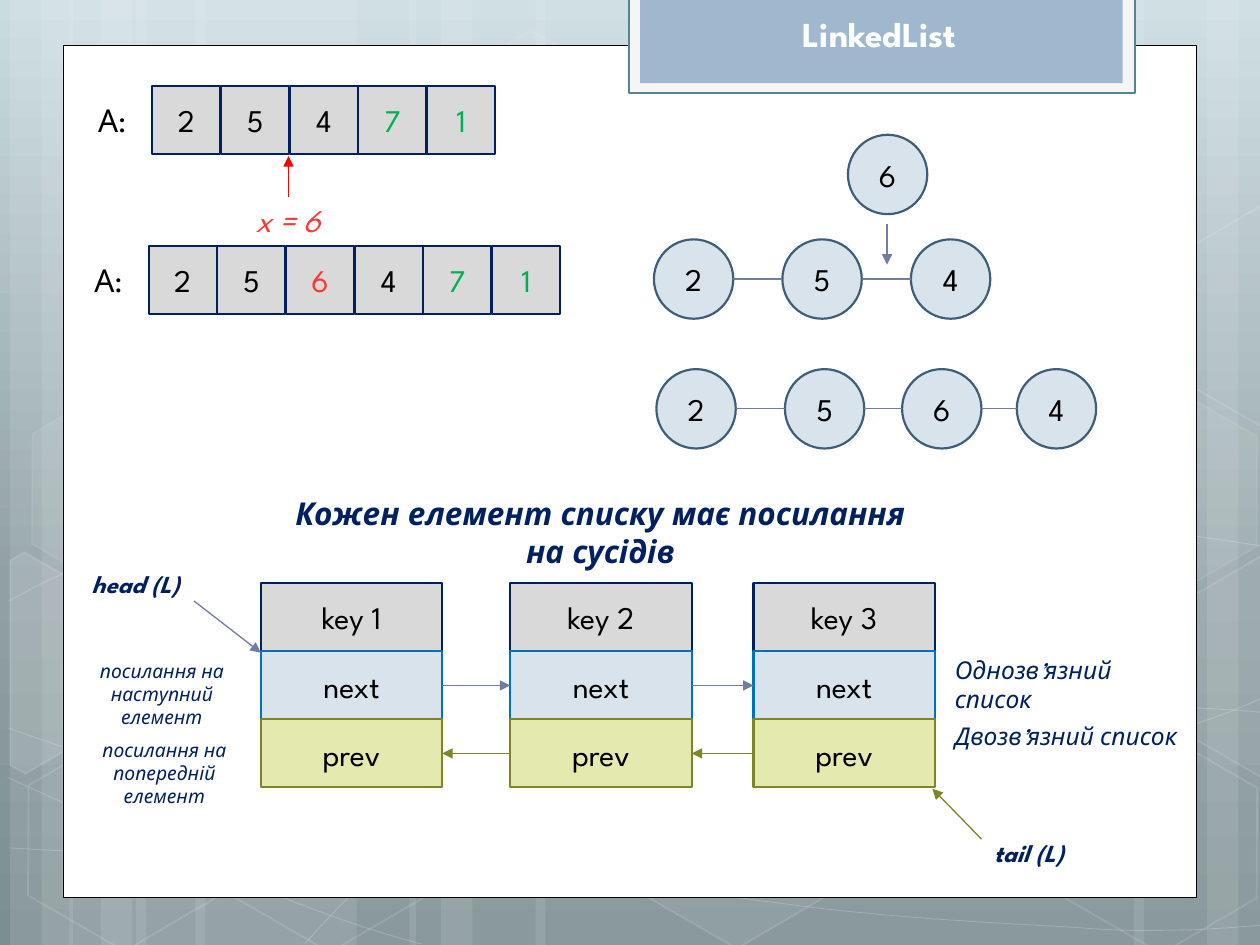
from copy import deepcopy
from itertools import pairwise
from math import cos, radians, sin

from pptx import Presentation
from pptx.dml.color import RGBColor
from pptx.enum.shapes import MSO_CONNECTOR, MSO_SHAPE
from pptx.enum.text import MSO_ANCHOR, MSO_AUTO_SIZE, PP_ALIGN
from pptx.oxml.ns import qn
from pptx.util import Inches, Pt
from lxml.etree import SubElement

FONT = "League Spartan"
WHITE, BLACK = RGBColor(255, 255, 255), RGBColor(0, 0, 0)
NAVY, RED, ARROW_RED = RGBColor(0, 0x20, 0x60), RGBColor(0xFF, 0x37, 0x37), RGBColor(255, 0, 0)
GREEN, GREY = RGBColor(0, 0xB0, 0x50), RGBColor(0xD9, 0xD9, 0xD9)
PALE_BLUE, SLATE = RGBColor(0xD9, 0xE3, 0xEB), RGBColor(0x3E, 0x5D, 0x78)
BLUE, LINK = RGBColor(0, 0x70, 0xC0), RGBColor(0x72, 0x7C, 0xA3)
LIME, OLIVE = RGBColor(0xE4, 0xE9, 0xAF), RGBColor(0x7D, 0x85, 0x25)
TAB_FILL, TAB_BORDER = RGBColor(0xF5, 0xF5, 0xF5), RGBColor(0x52, 0x86, 0x93)
TAB_INNER = RGBColor(0x9F, 0xB8, 0xCD)
SKY = ((0, RGBColor(0xCB, 0xDC, 0xE0)), (0.62, RGBColor(0x90, 0xA0, 0xA4)),
       (1, RGBColor(0x7D, 0x8E, 0x92)))

BANDS = [(1.08, 1.75), (0.08, 0.5), (0.33, 0.83), (1.55, 1.75), (0.55, 0.5), (0.8, 0.83),
         (7.33, 1.75), (9.58, 0.5), (9, 0.83), (4.25, 3.08), (3.25, 0.5), (3.5, 0.83)]
# Each curve is a start point followed by triples of Bezier points.
CURVES = [
    [(0.07, 6.73), (0.61, 6.76), (1.15, 6.79), (1.9, 6.78), (2.65, 6.77), (3.58, 6.75),
     (4.58, 6.65), (5.58, 6.55), (7, 6.36), (7.92, 6.17), (8.83, 5.98), (9.77, 5.68), (10.07, 5.51)],
    [(0.07, 4.77), (0.36, 4.61), (0.65, 4.46), (1.21, 4.31), (1.78, 4.16), (2.59, 3.94),
     (3.47, 3.87), (4.36, 3.8), (5.44, 3.79), (6.54, 3.87), (7.64, 3.95), (9.47, 4.26), (10.07, 4.34)],
    [(0.06, 6.17), (1.27, 6.72), (2.47, 7.27), (3.34, 7.49)],
    [(0.07, 5.78), (0.38, 5.89), (0.7, 6), (1.28, 6.16), (1.86, 6.31), (2.73, 6.56),
     (3.57, 6.73), (4.4, 6.9), (5.45, 7.08), (6.28, 7.18), (7.11, 7.29), (8, 7.33),
     (8.53, 7.36), (9.05, 7.4), (9.19, 7.38), (9.45, 7.38), (9.71, 7.37), (9.89, 7.35), (10.07, 7.34)],
    [(2.42, 7.49), (2.6, 7.29), (2.78, 7.09), (3.02, 6.91), (3.26, 6.73), (3.6, 6.53),
     (3.88, 6.39), (4.16, 6.25), (4.33, 6.19), (4.7, 6.09), (5.06, 5.99), (5.73, 5.85),
     (6.08, 5.78), (6.44, 5.71), (6.49, 5.71), (6.8, 5.69), (7.11, 5.66), (7.6, 5.63),
     (7.94, 5.62), (8.29, 5.61), (8.86, 5.62), (8.86, 5.62), (9.08, 5.62), (9.31, 5.62),
     (9.53, 5.62), (9.71, 5.63), (9.88, 5.64), (9.97, 5.65), (10.06, 5.66), (10.03, 5.65), (10.06, 5.66)],
]
# left, top, fill opacity, line opacity (percent)
HEXAGONS = [(3.34, 0.36, 4, 8), (4.97, 5.89, 6, 12), (0.11, 5.91, 0, 12), (0.14, 3.12, 7, 8),
            (1.74, 5.92, 0, 12), (7.53, 4.53, 10, 12), (8.34, 5.93, 0, 12), (8.34, 3.14, 7, 8)]
TILT = 30
# centre, corners as they stand after the tilt, fill opacity
CUT_HEXAGONS = [
    ((0.36, 5.35), [(0.08, 4.45), (0.19, 4.38), (0.96, 4.82), (0.95, 5.7), (0.2, 6.14), (0.08, 6.07)], 10),
    ((9.85, 5.2), [(9.26, 4.85), (10.01, 4.41), (10.09, 4.46), (10.09, 6.13), (10.02, 6.17), (9.26, 5.73)], 4),
    ((9.85, 2.41), [(9.26, 2.07), (10.01, 1.63), (10.1, 1.68), (10.09, 3.35), (10.02, 3.39), (9.26, 2.95)], 0),
]


def set_opacity(shape, fill_opacity, line_opacity):
    properties = shape._element.spPr
    for holder, percent in ((properties, fill_opacity), (properties.find(qn("a:ln")), line_opacity)):
        color = holder.find(qn("a:solidFill") + "/" + qn("a:srgbClr")) if percent else None
        if color is not None:
            SubElement(color, qn("a:alpha"), val=str(percent * 1000))


def paint(shape, fill=None, line=None, width=1.25):
    shape.shadow.inherit = False
    for target, color in ((shape.fill, fill), (shape.line.fill, line)):
        if color is None:
            target.background()
        else:
            target.solid()
            target.fore_color.rgb = color
    if line is not None:
        shape.line.width = Pt(width)


def write(shape, text, align=PP_ALIGN.CENTER, color=BLACK, **font_format):
    paragraph = shape.text_frame.paragraphs[0]
    paragraph.alignment = align
    run = paragraph.add_run()
    run.text = text
    run.font.color.rgb = color
    for name, value in {"name": FONT, "size": Pt(18), **font_format}.items():
        setattr(run.font, name, value)


def add_box(slide, box, fill, line=None, text="", color=BLACK, kind=MSO_SHAPE.RECTANGLE, width=1.25):
    shape = slide.shapes.add_shape(kind, *map(Inches, box))
    paint(shape, fill, line, width)
    if text:
        shape.text_frame.vertical_anchor = MSO_ANCHOR.MIDDLE
        write(shape, text, color=color)
    return shape


def add_label(slide, box, text, wrap=True, **text_format):
    label = slide.shapes.add_textbox(*map(Inches, box))
    label.text_frame.word_wrap = wrap
    label.text_frame.auto_size = MSO_AUTO_SIZE.SHAPE_TO_FIT_TEXT
    write(label, text, **text_format)


def add_line(slide, start, end, color=LINK, arrow=False):
    line = slide.shapes.add_connector(MSO_CONNECTOR.STRAIGHT, *map(Inches, (*start, *end)))
    line.line.color.rgb = color
    line.line.width = Pt(0.75)
    if arrow:
        SubElement(line.line._get_or_add_ln(), qn("a:tailEnd"), type="triangle")
    SubElement(line._element.spPr, qn("a:effectLst"))
    return line


def add_outline(slide, points, close):
    points = [(Inches(x), Inches(y)) for x, y in points]
    builder = slide.shapes.build_freeform(*points[0])
    builder.add_line_segments(points[1:], close=close)
    return builder.convert_to_shape()


def add_curve(slide, points):
    """Draw an outline and turn each three of its segments into one Bezier piece."""
    curve = add_outline(slide, points, False)
    segments = list(curve._element.spPr.iter(qn("a:lnTo")))
    outline = segments[0].getparent()
    for first in range(0, len(segments), 3):
        piece = SubElement(outline, qn("a:cubicBezTo"))
        for segment in segments[first:first + 3]:
            piece.append(segment[0])
            outline.remove(segment)
    return curve


def turn_back(point, center):
    angle = radians(TILT)
    dx, dy = point[0] - center[0], point[1] - center[1]
    return (center[0] + dx * cos(angle) + dy * sin(angle),
            center[1] - dx * sin(angle) + dy * cos(angle))


def build_backdrop(slide):
    fill = slide.background.fill
    fill.gradient()
    fill.gradient_angle = 270
    stop_list = fill.gradient_stops[0]._gs.getparent()
    stop_list.append(deepcopy(stop_list[0]))
    for stop, (position, color) in zip(fill.gradient_stops, SKY):
        stop.position, stop.color.rgb = position, color
    for left, width in BANDS:
        band = add_box(slide, (left, 0, width, 7.5), WHITE)
        set_opacity(band, 10, 0)
    for points in CURVES:
        curve = add_curve(slide, points)
        paint(curve, line=WHITE, width=0.5)
        set_opacity(curve, 0, 20)
    for left, top, opacity, line_opacity in HEXAGONS:
        hexagon = add_box(slide, (left, top, 1.75, 1.52), WHITE if opacity else None, WHITE,
                          kind=MSO_SHAPE.HEXAGON, width=1)
        hexagon.adjustments[0] = 0.285
        hexagon.rotation = TILT
        set_opacity(hexagon, opacity, line_opacity)
    for center, points, opacity in CUT_HEXAGONS:
        hexagon = add_outline(slide, [turn_back(point, center) for point in points], True)
        hexagon.rotation = TILT
        paint(hexagon, WHITE if opacity else None, WHITE, 1)
        set_opacity(hexagon, opacity, 12)
    add_box(slide, (0.5, 0.36, 9, 6.76), WHITE, BLACK, width=0.5)


def build_title(slide, left, top, width, height):
    add_box(slide, (left, top, width, height), TAB_FILL, TAB_BORDER)
    add_box(slide, (left + 0.09, top, width - 0.19, height - 0.08), TAB_INNER)
    title = slide.shapes.title
    title._element.getparent().append(title._element)  # bring in front of the tab
    title.left, title.top, title.width, title.height = map(Inches, (6.24, 0.05, 1.48, 0.44))
    for name, value in {"word_wrap": False, "vertical_anchor": MSO_ANCHOR.TOP,
                        "auto_size": MSO_AUTO_SIZE.SHAPE_TO_FIT_TEXT}.items():
        setattr(title.text_frame, name, value)
    write(title, "LinkedList", color=WHITE, size=Pt(20), bold=True)


def build_array(slide, left, top, values):
    colors = {"6": RED, "7": GREEN, "1": GREEN}
    add_label(slide, (left - 0.53, top + 0.07, 0.46, 0.4), "А:", wrap=False, align=PP_ALIGN.LEFT)
    for index, value in enumerate(values):
        add_box(slide, (left + index * 0.545, top, 0.54, 0.54), GREY, NAVY, value,
                colors.get(value, BLACK))


def build_chain(slide, top, nodes, size=0.63):
    """Draw circles at the given lefts and link the neighbours."""
    for left, value in nodes:
        add_box(slide, (left, top, size, size), PALE_BLUE, SLATE, value, kind=MSO_SHAPE.OVAL)
    middle = top + size / 2
    for (left, _), (following, _) in pairwise(nodes):
        add_line(slide, (left + size, middle), (following, middle))


def build_linked_elements(slide, lefts, top, width=1.44, height=0.54):
    rows = {"key": (GREY, NAVY), "next": (PALE_BLUE, BLUE), "prev": (LIME, OLIVE)}
    cells = {name: [] for name in rows}
    for row, (name, (fill, line)) in enumerate(rows.items()):
        for number, left in enumerate(lefts, 1):
            text = f"key {number}" if name == "key" else name
            box = (left, top + row * height, width, height)
            cells[name].append(add_box(slide, box, fill, line, text))
    for chain, color, start_site, end_site in ((cells["next"], LINK, 3, 1),
                                               (cells["prev"][::-1], OLIVE, 1, 3)):
        for start, end in pairwise(chain):
            arrow = add_line(slide, (0, 0), (1, 1), color, arrow=True)
            arrow.begin_connect(start, start_site)
            arrow.end_connect(end, end_site)
    add_line(slide, (1.54, 4.77), (lefts[0], 5.18), arrow=True)
    add_line(slide, (7.79, 6.66), (7.4, 6.26), OLIVE, arrow=True)


def build_notes(slide):
    navy = {"color": NAVY, "italic": True}
    small = {**navy, "size": Pt(11)}
    medium = {**navy, "size": Pt(14), "align": PP_ALIGN.LEFT}
    strong = {**medium, "bold": True}
    for box, text, text_format in (
        ((2.07, 3.87, 5.39, 0.71), "Кожен елемент списку має посилання на сусідів", {**navy, "bold": True}),
        ((0.58, 5.18, 1.41, 0.66), "посилання на наступний елемент", small),
        ((0.6, 5.81, 1.41, 0.66), "посилання на попередній елемент", small),
        ((7.48, 5.15, 2.09, 0.57), "Однозв’язний список", medium),
        ((7.48, 5.67, 2.09, 0.57), "Двозв’язний список", medium),
        ((0.63, 4.47, 1.1, 0.34), "head (L)", strong),
        ((7.79, 6.6, 1.1, 0.34), "tail (L)", strong),
    ):
        add_label(slide, box, text, **text_format)


def main():
    presentation = Presentation()
    presentation.slide_width, presentation.slide_height = Inches(10), Inches(7.5)
    slide = presentation.slides.add_slide(presentation.slide_layouts[5])
    build_backdrop(slide)
    build_title(slide, 4.99, -0.02, 4.02, 0.76)
    build_array(slide, 1.21, 0.68, "25471")
    add_label(slide, (1.87, 1.55, 0.83, 0.4), "x = 6", color=RED, italic=True)
    add_line(slide, (2.29, 1.56), (2.29, 1.24), ARROW_RED, arrow=True)
    build_array(slide, 1.18, 1.95, "256471")
    build_chain(slide, 1.07, [(6.73, "6")])
    add_line(slide, (7.04, 1.78), (7.04, 2.1), arrow=True)
    build_chain(slide, 1.9, [(5.19, "2"), (6.21, "5"), (7.23, "4")])
    build_chain(slide, 2.93, [(5.21, "2"), (6.23, "5"), (7.16, "6"), (8.07, "4")])
    build_linked_elements(slide, (2.07, 4.05, 5.98), 4.63)
    build_notes(slide)
    presentation.save("out.pptx")


if __name__ == "__main__":
    main()
